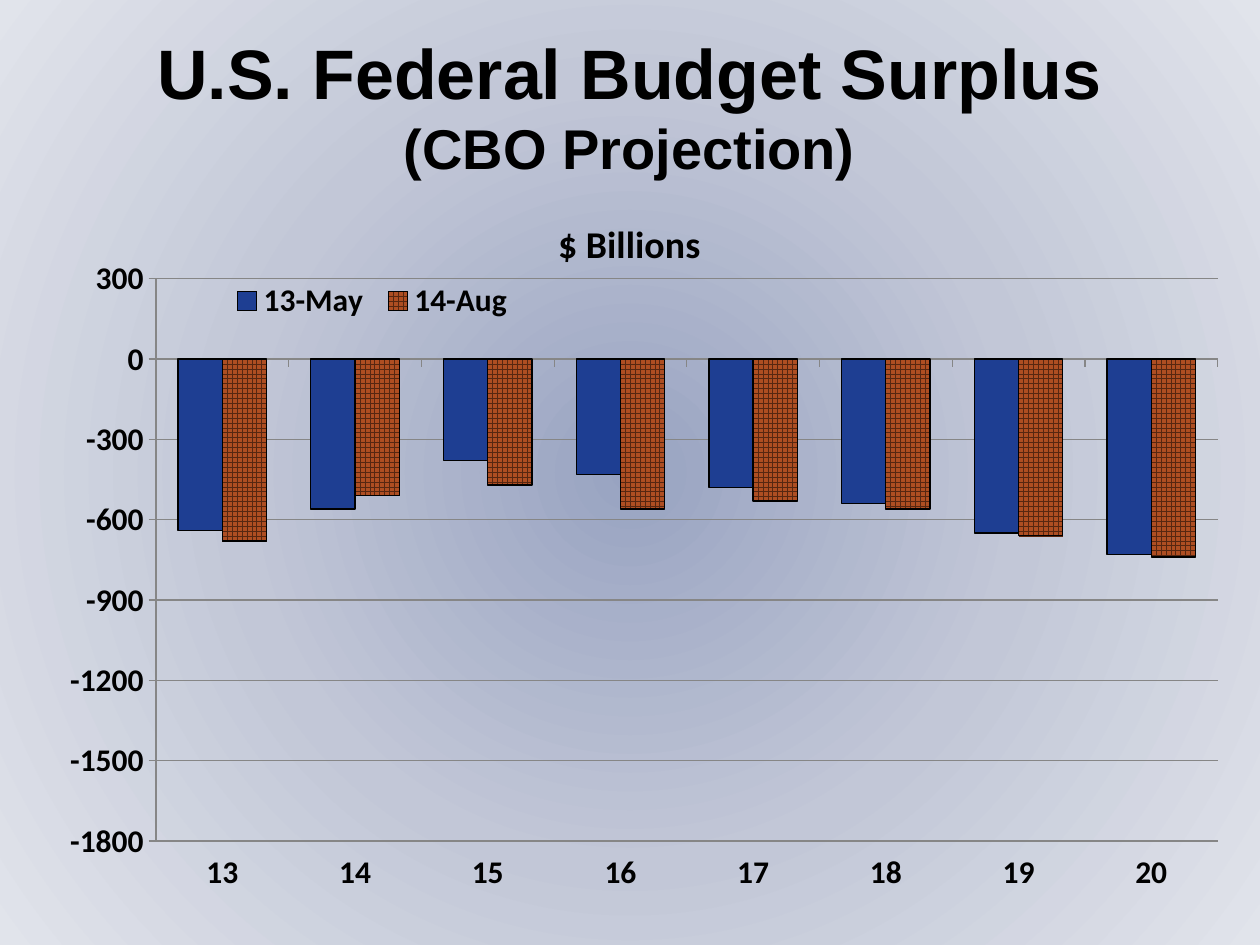
"""Build a slide with a column chart of projected federal budget surpluses."""
from pptx import Presentation
from pptx.chart.data import CategoryChartData
from pptx.dml.color import RGBColor
from pptx.enum.chart import XL_CHART_TYPE as ChartType, XL_LEGEND_POSITION as LegendPosition
from pptx.enum.chart import XL_TICK_LABEL_POSITION as LabelPosition, XL_TICK_MARK as TickMark
from pptx.enum.dml import MSO_PATTERN as Pattern
from pptx.enum.text import MSO_ANCHOR as Anchor, PP_ALIGN as Align
from pptx.oxml import parse_xml
from pptx.oxml.ns import nsdecls
from pptx.util import Cm, Pt

BLACK = RGBColor(0x00, 0x00, 0x00)
GREY = RGBColor(0x86, 0x86, 0x86)
BLUE = RGBColor(0x1E, 0x3E, 0x92)
RUST = RGBColor(0xAE, 0x4E, 0x22)
BROWN = RGBColor(0x57, 0x27, 0x11)
BACKDROP = [(0, RGBColor(0x98, 0xA3, 0xC1)), (50, RGBColor(0xC2, 0xC7, 0xD7)),
            (100, RGBColor(0xE1, 0xE4, 0xEB))]


def style_font(font, name, size):
    font.name = name
    font.size = Pt(size)
    font.bold = True
    font.color.rgb = BLACK


def place_part(parent, index, x, y, w, h, target=""):
    for old in parent.xpath("./c:layout"):
        parent.remove(old)
    parent.insert(index, parse_xml(
        f'<c:layout {nsdecls("c")}><c:manualLayout>{target}'
        '<c:xMode val="edge"/><c:yMode val="edge"/>'
        f'<c:x val="{x}"/><c:y val="{y}"/><c:w val="{w}"/><c:h val="{h}"/>'
        '</c:manualLayout></c:layout>'))


deck = Presentation()
deck.slide_width = Cm(25.4)
deck.slide_height = Cm(19.05)
page = deck.slides.add_slide(deck.slide_layouts[6])

page.background.fill.solid()
plain = page.element.xpath(".//p:bgPr/a:solidFill")[0]
stops = "".join(f'<a:gs pos="{share * 1000}"><a:srgbClr val="{color}"/></a:gs>'
                for share, color in BACKDROP)
plain.getparent().replace(plain, parse_xml(
    f'<a:gradFill {nsdecls("a")} rotWithShape="1"><a:gsLst>{stops}</a:gsLst>'
    '<a:path path="circle"><a:fillToRect l="50000" t="50000" r="50000" b="50000"/></a:path>'
    '</a:gradFill>'))

box = page.shapes.add_textbox(Cm(0.64), Cm(0.84), Cm(24.1), Cm(2.54))
frame = box.text_frame
frame.word_wrap = True
frame.vertical_anchor = Anchor.MIDDLE
for position, (text, size) in enumerate([("U.S. Federal Budget Surplus", 40),
                                         ("(CBO Projection)", 32)]):
    para = frame.add_paragraph() if position else frame.paragraphs[0]
    para.alignment = Align.CENTER
    span = para.add_run()
    span.text = text
    style_font(span.font, "Arial", size)

data = CategoryChartData()
data.categories = [str(year) for year in range(13, 21)]
data.add_series("13-May", [-640, -560, -380, -430, -480, -540, -650, -730])
data.add_series("14-Aug", [-680, -510, -470, -560, -530, -560, -660, -740])
chart = page.shapes.add_chart(ChartType.COLUMN_CLUSTERED, Cm(0.64), Cm(3.81),
                              Cm(24.1), Cm(14.38), data).chart
style_font(chart.font, "Calibri", 18)

chart.has_title = True
span = chart.chart_title.text_frame.paragraphs[0].add_run()
span.text = "$ Billions"
style_font(span.font, "Calibri", 21.6)

chart.has_legend = True
chart.legend.position = LegendPosition.TOP
chart.legend.include_in_layout = False
place_part(chart.legend._element, 1, 0.16, 0.13, 0.25, 0.05)
place_part(chart._chartSpace.chart.plotArea, 0, 0.104, 0.126, 0.888, 0.788,
           '<c:layoutTarget val="inner"/>')

values = chart.value_axis
values.minimum_scale, values.maximum_scale, values.major_unit = -1800, 300, 300
values.has_major_gridlines = True
values.major_gridlines.format.line.color.rgb = GREY
values.major_gridlines.format.line.width = Pt(0.75)
chart.category_axis.tick_label_position = LabelPosition.LOW
for axis in (values, chart.category_axis):
    axis.major_tick_mark = TickMark.OUTSIDE
    axis.minor_tick_mark = TickMark.NONE
    axis.format.line.color.rgb = GREY
    axis.format.line.width = Pt(0.75)

plot = chart.plots[0]
plot.gap_width = 100
plot.overlap = 0
plot.vary_by_categories = False
for series in plot.series:
    series.invert_if_negative = False
    series.format.line.color.rgb = BLACK
    series.format.line.width = Pt(0.75)
may, august = plot.series
may.format.fill.solid()
may.format.fill.fore_color.rgb = BLUE
august.format.fill.patterned()
august.format.fill.pattern = Pattern.LARGE_GRID
august.format.fill.fore_color.rgb = BROWN
august.format.fill.back_color.rgb = RUST

deck.save("out.pptx")
